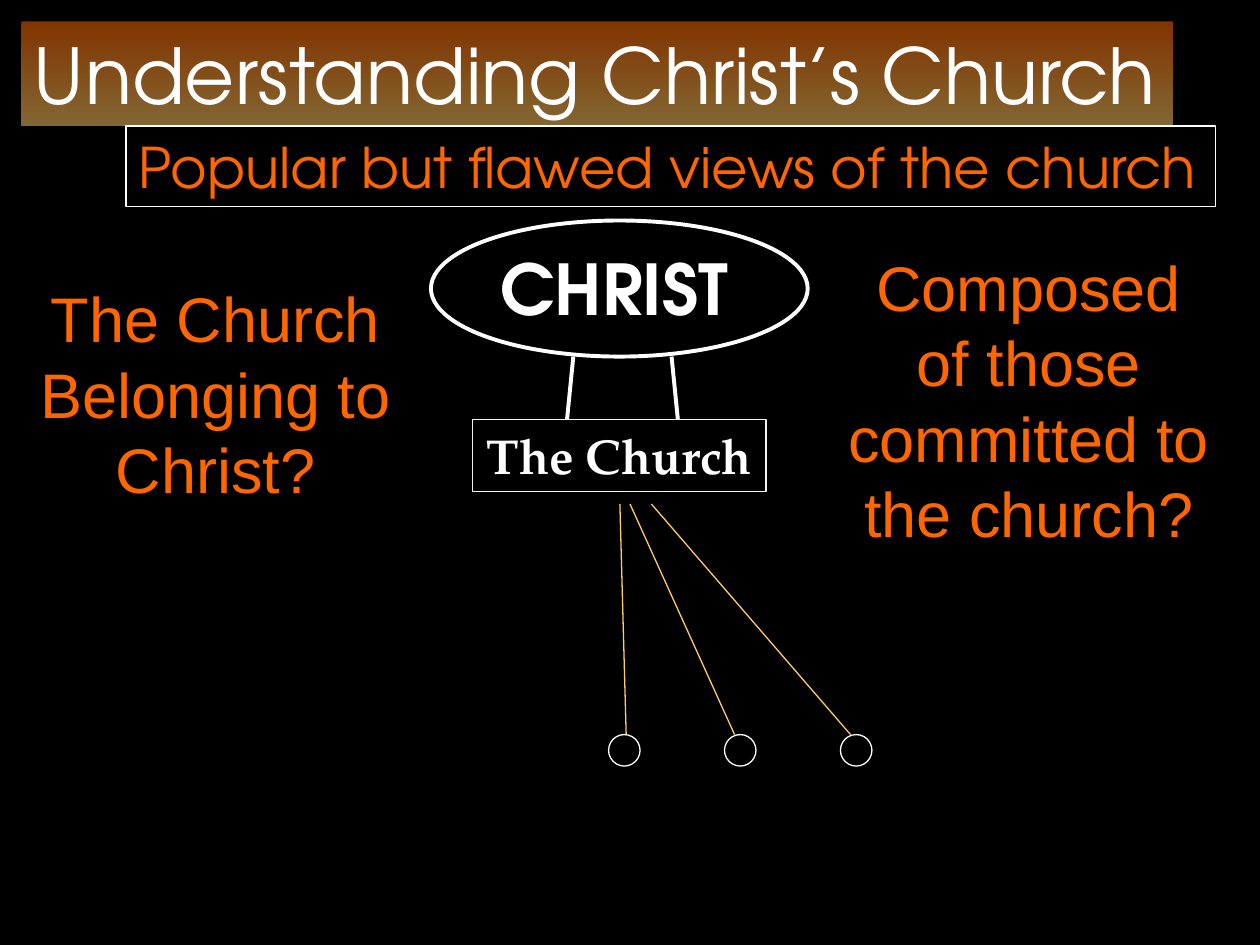
from lxml.etree import SubElement
from pptx import Presentation
from pptx.dml.color import RGBColor
from pptx.enum.shapes import MSO_CONNECTOR as Connector, MSO_SHAPE as Shape
from pptx.enum.text import MSO_ANCHOR as Anchor, MSO_AUTO_SIZE as AutoSize, PP_ALIGN as Align
from pptx.oxml.ns import qn
from pptx.util import Inches, Pt

DISPLAY, SERIF, SANS = "TeX Gyre Adventor", "TeX Gyre Pagella", "Arial"
WHITE, OFF_WHITE, ORANGE, GOLD, BLACK = "FFFFFF", "F2F2F2", "FF6600", "FFCC66", "000000"


def color(value):
    return RGBColor.from_string(value)


def write(shape, lines, font, size, ink, bold=False, align=Align.CENTER, wrap=True):
    """Fill a shape with one paragraph per line, all in one style."""
    frame = shape.text_frame
    frame.word_wrap = wrap
    frame.auto_size = AutoSize.SHAPE_TO_FIT_TEXT
    frame.vertical_anchor = Anchor.TOP
    for index, line in enumerate(lines):
        para = frame.add_paragraph() if index else frame.paragraphs[0]
        para.alignment = align
        span = para.add_run()
        span.text = line
        span.font.name = font
        span.font.size = Pt(size)
        span.font.bold = bold
        span.font.color.rgb = color(ink)


def add_outline(page, kind, place, ink=None, width=0.75):
    """Add an unfilled shape, with a line only if ink is given."""
    shape = page.shapes.add_shape(kind, *map(Inches, place))
    shape.shadow.inherit = False
    shape.fill.background()
    if ink:
        shape.line.color.rgb = color(ink)
        shape.line.width = Pt(width)
    else:
        shape.line.fill.background()
    return shape


def add_text(page, place, lines, font, size, ink, bold=False):
    box = page.shapes.add_textbox(*map(Inches, place))
    write(box, lines, font, size, ink, bold)


def add_line(page, start, end, ink, width):
    line = page.shapes.add_connector(Connector.STRAIGHT, *map(Inches, start + end))
    line.line.color.rgb = color(ink)
    line.line.width = Pt(width)
    SubElement(line._element.spPr, qn("a:effectLst"))


def fade(shape, inks, opacity):
    """Fill from top to bottom with a translucent two-colour gradient."""
    shape.fill.gradient()
    shape.fill.gradient_angle = 270
    for stop, ink in zip(shape.fill.gradient_stops, inks):
        stop.color.rgb = color(ink)
    for tint in shape._element.spPr.iter(qn("a:srgbClr")):
        SubElement(tint, qn("a:alpha"), val=str(opacity * 1000))


def add_headings(page):
    title = add_outline(page, Shape.RECTANGLE, (0.17, 0.17, 9.14, 0.83))
    fade(title, (ORANGE, GOLD), 51)
    write(title, ["Understanding Christ’s Church"], DISPLAY, 44, WHITE,
          align=Align.LEFT, wrap=False)
    subtitle = add_outline(page, Shape.RECTANGLE, (1, 1, 8.65, 0.64), WHITE)
    write(subtitle, ["Popular but flawed views of the church"], DISPLAY, 32, ORANGE,
          align=Align.LEFT, wrap=False)


def add_head_and_church(page):
    add_text(page, (3.25, 1.9, 3.25, 0.77), ["CHRIST"], DISPLAY, 40, WHITE, bold=True)
    add_outline(page, Shape.OVAL, (3.42, 1.75, 2.99, 1.08), WHITE, 2.25)
    for top_x, bottom_x in ((4.55, 4.5), (5.33, 5.38)):
        add_line(page, (top_x, 2.83), (bottom_x, 3.33), WHITE, 2.25)
    church = add_outline(page, Shape.RECTANGLE, (3.75, 3.33, 2.33, 0.57), OFF_WHITE)
    write(church, ["The Church"], SERIF, 28, WHITE, bold=True)


def add_members(page):
    """Each member is a small circle tied to the church by a line."""
    top, size = 5.83, 0.25
    for start_x, end_x, left in ((5.17, 6.75, 6.67), (5, 5.83, 5.75), (4.92, 4.97, 4.83)):
        add_line(page, (start_x, 4), (end_x, top), GOLD, 0.75)
        add_outline(page, Shape.OVAL, (left, top, size, size), WHITE)


def main():
    deck = Presentation()
    deck.slide_width, deck.slide_height = Inches(10), Inches(7.5)
    page = deck.slides.add_slide(deck.slide_layouts[6])
    page.background.fill.solid()
    page.background.fill.fore_color.rgb = color(BLACK)
    add_headings(page)
    add_head_and_church(page)
    add_text(page, (0.17, 2.17, 3.08, 1.9), ["The Church Belonging to Christ?"],
             SANS, 36, ORANGE)
    add_text(page, (6.25, 1.92, 3.83, 2.52),
             ["Composed", "of those committed to the church?"], SANS, 36, ORANGE)
    add_members(page)
    deck.save("out.pptx")


if __name__ == "__main__":
    main()
